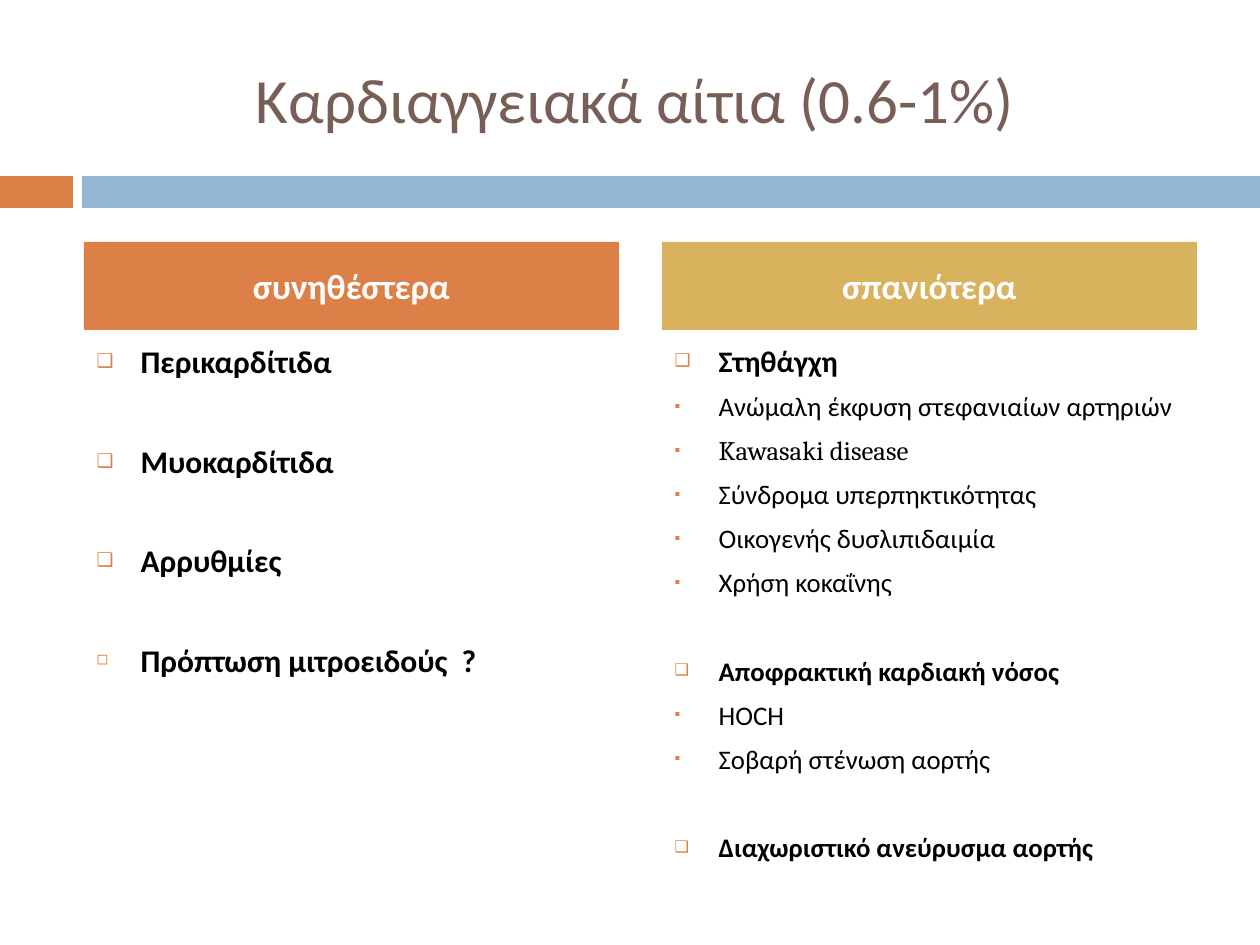
from lxml.etree import SubElement
from pptx import Presentation
from pptx.dml.color import RGBColor
from pptx.enum.shapes import MSO_SHAPE
from pptx.enum.text import MSO_ANCHOR, MSO_AUTO_SIZE, PP_ALIGN
from pptx.oxml.ns import qn
from pptx.util import Pt

PX = 914400 / 126  # EMU in one px

ORANGE = RGBColor(0xDD, 0x80, 0x47)
BLUE = RGBColor(0x94, 0xB6, 0xD2)
GOLD = RGBColor(0xD8, 0xB2, 0x5C)
BROWN = RGBColor(0x77, 0x5F, 0x55)
BLACK = RGBColor(0, 0, 0)
WHITE = RGBColor(0xFF, 0xFF, 0xFF)

# Content: each list item is (bullet, text, size, space before)
TITLE = "Καρδιαγγειακά αίτια (0.6-1%)"
MAIN, OPEN, SUB = "❑", "◻", "▪"
COLUMNS = [
    ("συνηθέστερα", ORANGE, [
        (MAIN, "Περικαρδίτιδα", 18, 7),
        (MAIN, "Μυοκαρδίτιδα", 18, 35.2),
        (MAIN, "Αρρυθμίες", 18, 35.2),
        (OPEN, "Πρόπτωση μιτροειδούς  ?", 18, 35.2),
    ]),
    ("σπανιότερα", GOLD, [
        (MAIN, "Στηθάγχη", 17, 7),
        (SUB, "Ανώμαλη έκφυση στεφανιαίων αρτηριών", 15.3, 6.8),
        (SUB, "Kawasaki disease", 15.3, 6.8),
        (SUB, "Σύνδρομα υπερπηκτικότητας", 15.3, 6.8),
        (SUB, "Οικογενής δυσλιπιδαιμία", 15.3, 6.8),
        (SUB, "Χρήση κοκαΐνης", 15.3, 6.8),
        (MAIN, "Αποφρακτική καρδιακή νόσος", 15.3, 32),
        (SUB, "HOCH", 15.3, 6.8),
        (SUB, "Σοβαρή στένωση αορτής", 15.3, 6.8),
        (MAIN, "Διαχωριστικό ανεύρυσμα αορτής", 15.3, 32),
    ]),
]
BARS = [(0, 73, ORANGE), (82, 1178, BLUE)]  # left, width, colour
BAR_TOP, BAR_HEIGHT = 176, 32
COLUMN_LEFT, COLUMN_WIDTH, COLUMN_STEP = 84, 535, 578
HEAD_TOP, HEAD_HEIGHT = 242, 88
LIST_TOP, LIST_HEIGHT = 336, 494
INDENT = 44


def px(value):
    return round(value * PX)


def place(box, left, top, width, height):
    box.left, box.top = px(left), px(top)
    box.width, box.height = px(width), px(height)


def style(para, size, colour, bold, font="Calibri"):
    for span in para.runs:
        span.font.name, span.font.size = font, Pt(size)
        span.font.bold, span.font.color.rgb = bold, colour


def set_heading(box, text, size, colour, bold):
    frame = box.text_frame
    frame.text = text
    frame.auto_size = MSO_AUTO_SIZE.NONE
    frame.vertical_anchor = MSO_ANCHOR.MIDDLE
    para = frame.paragraphs[0]
    para.alignment = PP_ALIGN.CENTER
    style(para, size, colour, bold)


def set_bullet(para, char):
    props = para._p.get_or_add_pPr()
    props.set("marL", str(px(INDENT)))
    props.set("indent", str(-px(INDENT)))
    SubElement(SubElement(props, qn("a:buClr")), qn("a:srgbClr"), val=str(ORANGE))
    SubElement(props, qn("a:buSzPct"), val="60000")
    SubElement(props, qn("a:buChar"), char=char)


def fill_list(box, items):
    frame = box.text_frame
    frame.auto_size = MSO_AUTO_SIZE.NONE
    frame.text = "\n".join(text for _, text, _, _ in items)
    for para, (bullet, text, size, space) in zip(frame.paragraphs, items):
        para.space_before = Pt(space)
        set_bullet(para, bullet)
        font = "Cambria" if text.isascii() and " " in text else "Calibri"
        style(para, size, BLACK, bullet != SUB, font)


deck = Presentation()
deck.slide_width, deck.slide_height = px(1260), px(945)
page = deck.slides.add_slide(deck.slide_layouts.get_by_name("Comparison"))

# Band under the title
for left, width, colour in BARS:
    bar = page.shapes.add_shape(MSO_SHAPE.RECTANGLE, px(left), px(BAR_TOP),
                                px(width), px(BAR_HEIGHT))
    bar.shadow.inherit = False
    bar.fill.solid()
    bar.fill.fore_color.rgb = colour
    bar.line.fill.background()

# Title
place(page.shapes.title, 73, 38, 1124, 120)
set_heading(page.shapes.title, TITLE, 36, BROWN, False)

# Two columns: coloured heading above a bulleted list
_, *bodies = page.placeholders
for column, (heading, colour, items) in enumerate(COLUMNS):
    head, body = bodies[2 * column:2 * column + 2]
    left = COLUMN_LEFT + column * COLUMN_STEP
    place(head, left, HEAD_TOP, COLUMN_WIDTH, HEAD_HEIGHT)
    head.fill.solid()
    head.fill.fore_color.rgb = colour
    set_heading(head, heading, 20, WHITE, True)
    head.text_frame.paragraphs[0].space_before = Pt(7)
    place(body, left, LIST_TOP, COLUMN_WIDTH, LIST_HEIGHT)
    fill_list(body, items)

deck.save("out.pptx")
